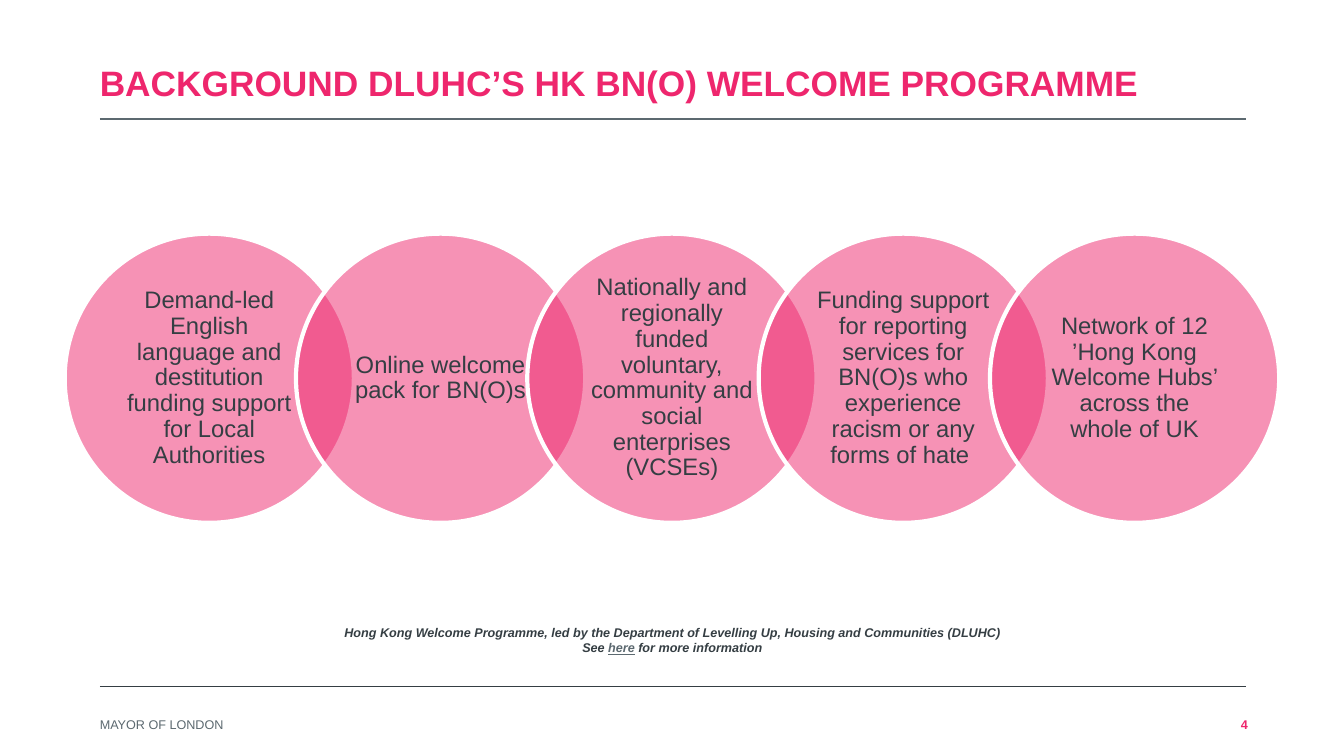
import pptx
import pptx.util
import pptx.dml.color
import pptx.enum.shapes
import pptx.enum.text
from pptx.oxml.ns import qn
from lxml import etree

Pt = pptx.util.Pt
ALIGN = pptx.enum.text.PP_ALIGN
ANCHOR = pptx.enum.text.MSO_ANCHOR
COLORS = {"pink": "EE266D", "dark": "353E43", "grey": "5C6970", "white": "FFFFFF"}


class Deck:
    def __init__(self, prs, font="Arial"):
        self.s = prs.slides.add_slide(prs.slide_layouts[6])
        self.font = font

    def rgb(self, name):
        return pptx.dml.color.RGBColor.from_string(COLORS[name])

    def frame(self, shape, anchor, insets):
        tf = shape.text_frame
        tf.word_wrap = True
        tf.vertical_anchor = anchor
        tf.margin_left, tf.margin_top, tf.margin_right, tf.margin_bottom = map(Pt, insets)
        return tf

    def style(self, p, size, color, bold=False, italic=False, align=ALIGN.LEFT, spacing=1.0):
        f = p.font
        f.name, f.size, f.bold, f.italic = self.font, Pt(size), bold, italic
        f.color.rgb = self.rgb(color)
        p.alignment, p.line_spacing = align, spacing

    def text(self, x, y, w, h, lines, size, color, anchor=ANCHOR.MIDDLE,
             insets=(0, 0, 0, 0), **look):
        box = self.s.shapes.add_textbox(Pt(x), Pt(y), Pt(w), Pt(h))
        tf = self.frame(box, anchor, insets)
        for i, runs in enumerate(lines):
            p = tf.paragraphs[0] if i == 0 else tf.add_paragraph()
            self.style(p, size, color, **look)
            for words in runs:
                p.add_run().text = words
        return tf

    def rule(self, x1, x2, y, color):
        line = self.s.shapes.add_connector(
            pptx.enum.shapes.MSO_CONNECTOR.STRAIGHT, Pt(x1), Pt(y), Pt(x2), Pt(y))
        line.line.color.rgb = self.rgb(color)
        line.line.width = Pt(1)
        etree.SubElement(line._element.spPr, qn("a:effectLst"))

    def circle(self, x, y, d, words):
        sp = self.s.shapes.add_shape(
            pptx.enum.shapes.MSO_SHAPE.OVAL, Pt(x), Pt(y), Pt(d), Pt(d))
        sp.shadow.inherit = False
        sp.fill.solid()
        sp.fill.fore_color.rgb = self.rgb("pink")
        fill = sp._element.spPr.find(qn("a:solidFill"))
        etree.SubElement(fill[0], qn("a:alpha"), val="50000")
        sp.line.color.rgb = self.rgb("white")
        sp.line.width = Pt(3)
        p = self.frame(sp, ANCHOR.MIDDLE, (11.3, 1.4, 11.3, 1.4)).paragraphs[0]
        p.text = words
        self.style(p, 17, "dark", align=ALIGN.CENTER, spacing=0.9)


prs = pptx.Presentation()
prs.slide_width, prs.slide_height = Pt(960), Pt(540)
deck = Deck(prs)
LEFT, RIGHT = 71.3, 890

# Title and rules
deck.text(LEFT, 39.6, RIGHT - LEFT, 42.5,
          [["BACKGROUND DLUHC’S HK BN(O) WELCOME PROGRAMME"]],
          25.2, "pink", insets=(0, 3.6, 7.2, 3.6), bold=True, spacing=0.9)
deck.rule(LEFT, RIGHT, 85, "grey")
deck.rule(LEFT, RIGHT, 490.3, "dark")

# Chain of overlapping circles
OFFERS = [
    "Demand-led English language and destitution funding support for Local Authorities",
    "Online welcome pack for BN(O)s",
    "Nationally and regionally funded voluntary, community and social enterprises (VCSEs)",
    "Funding support for reporting services for BN(O)s who experience racism or any forms of hate ",
    "Network of 12 ’Hong Kong Welcome Hubs’ across the whole of UK",
]
for i, offer in enumerate(OFFERS):
    deck.circle(46.2 + i * 165.24, 166.9, 206.6, offer)

# Source note
tf = deck.text(85.7, 446.4, 789, 28, [
    ["Hong Kong Welcome Programme, led by the Department of Levelling Up, "
     "Housing and Communities (DLUHC)"],
    ["See ", "here", " for more information"],
], 9, "dark", anchor=ANCHOR.TOP, bold=True, italic=True, align=ALIGN.CENTER)
r = tf.paragraphs[1].runs[1]
r.font.underline = True
r.font.color.rgb = deck.rgb("grey")

# Footer
deck.text(LEFT, 509, 368, 17.3, [["MAYOR OF LONDON"]], 9, "grey")
deck.text(523.4, 509, 368, 17.3, [["4"]], 9, "pink", bold=True, align=ALIGN.RIGHT)

prs.save("out.pptx")
